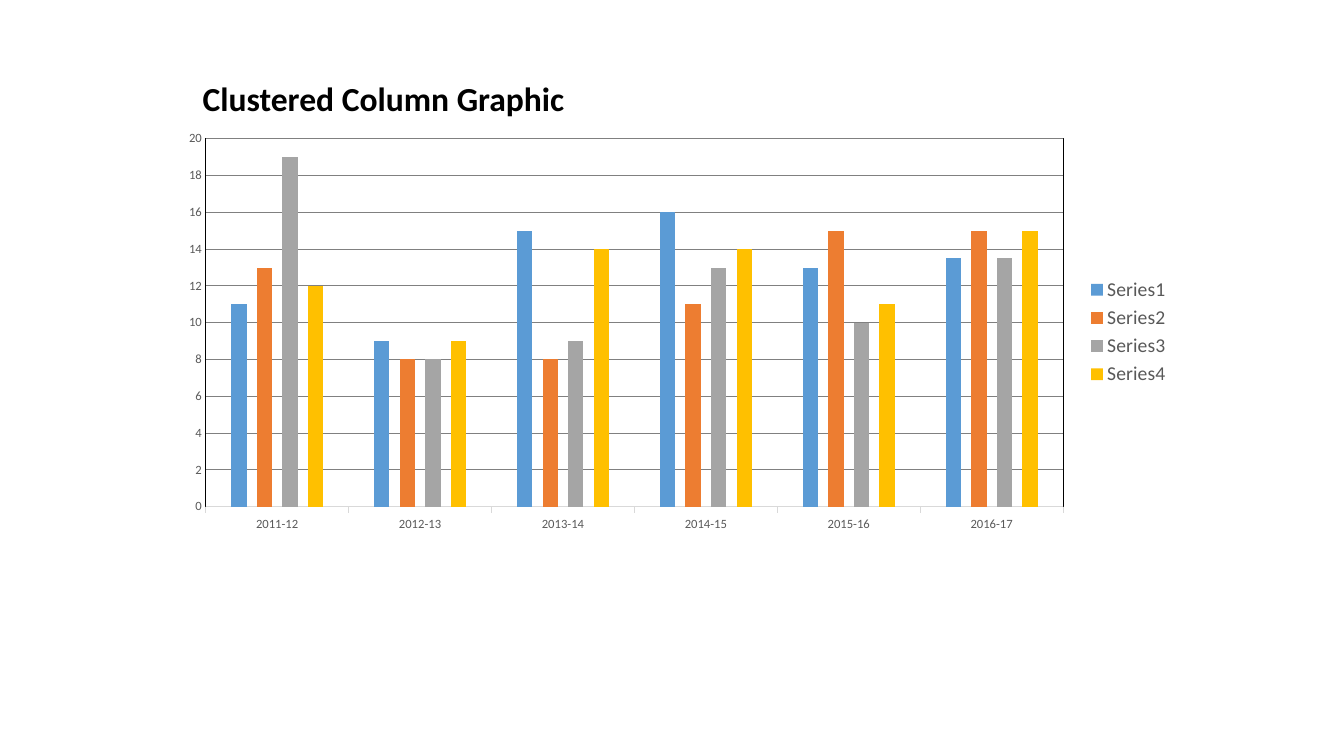
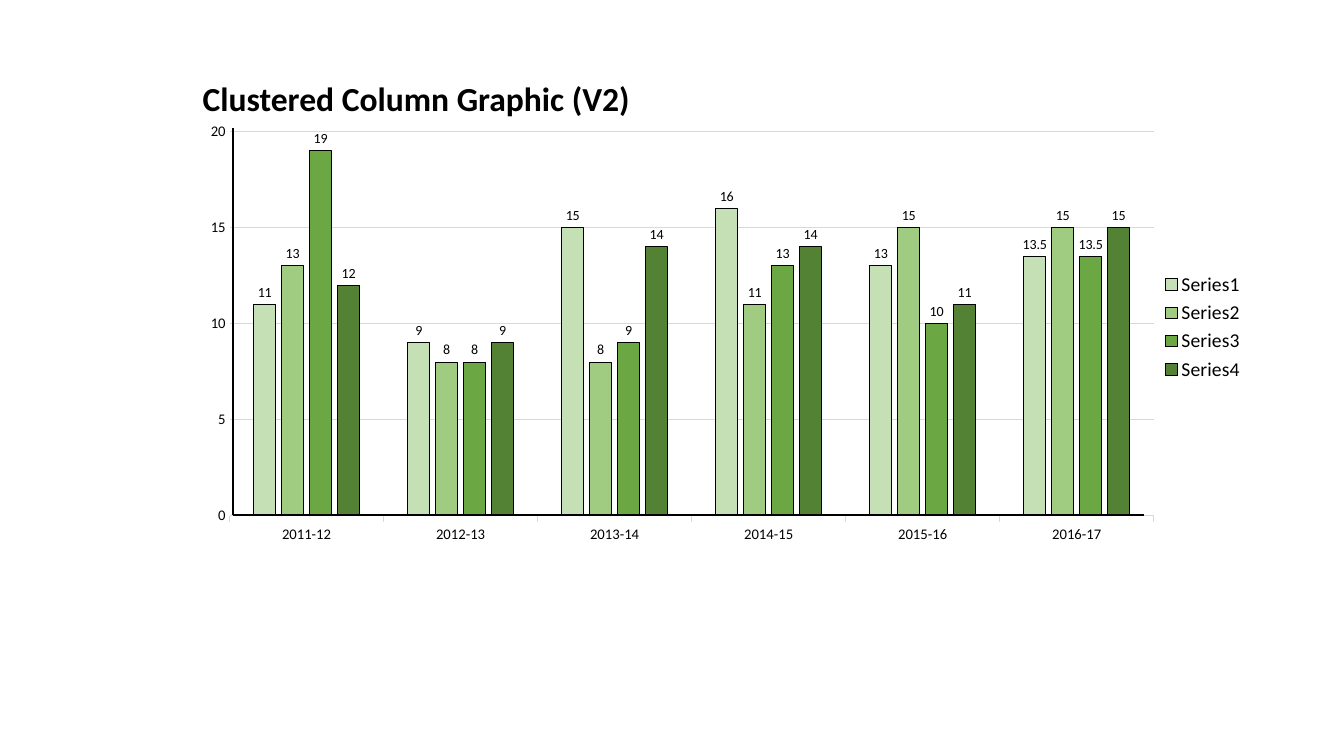
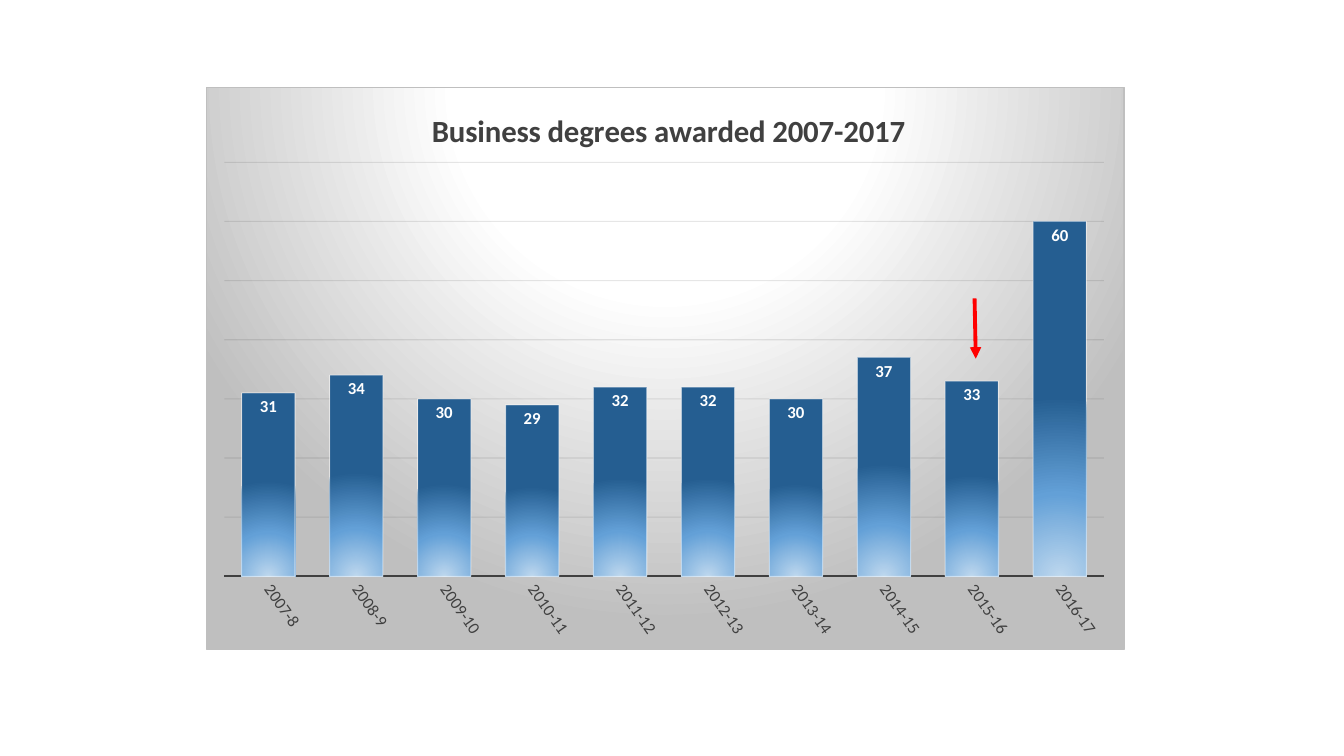
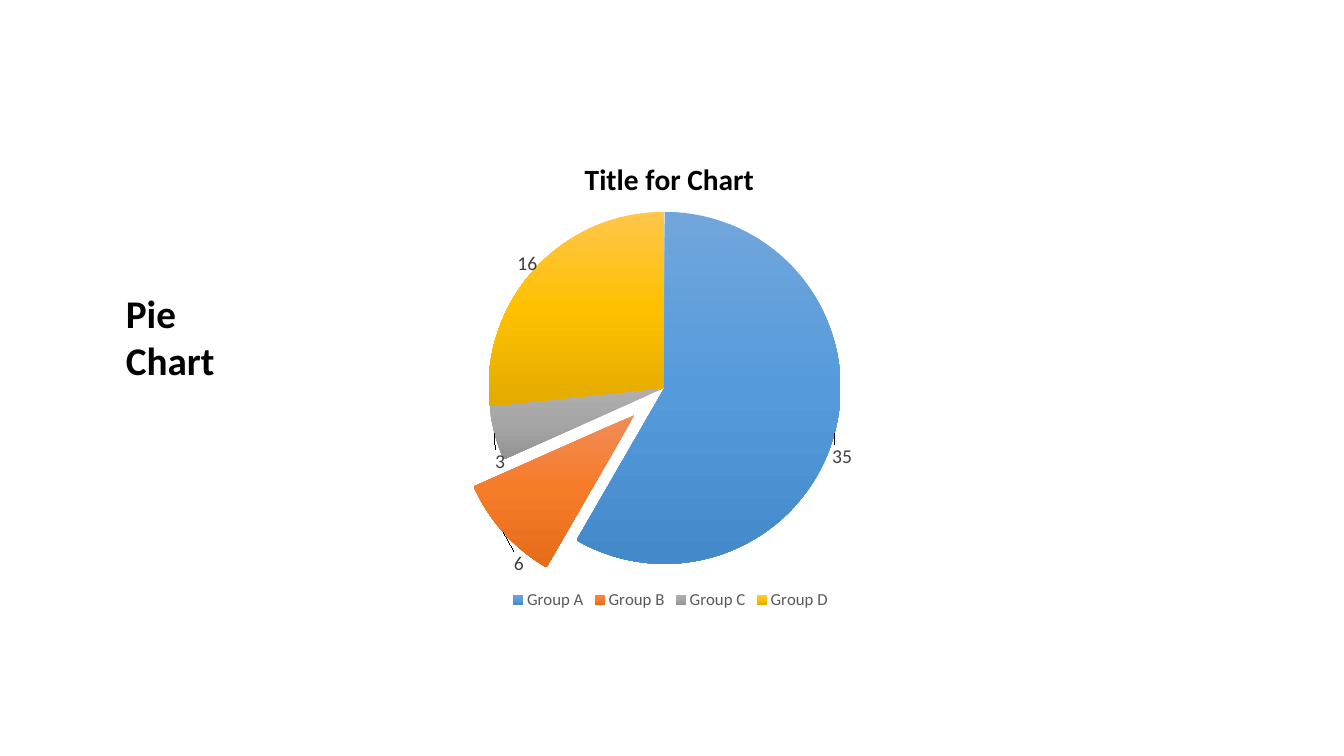
"""Build four slides of column and pie charts."""
from pptx import Presentation
from pptx.chart.data import CategoryChartData
from pptx.dml.color import RGBColor
from pptx.enum.chart import XL_CHART_TYPE, XL_LABEL_POSITION, XL_LEGEND_POSITION, XL_TICK_MARK
from pptx.enum.shapes import MSO_CONNECTOR
from pptx.enum.text import MSO_ANCHOR, MSO_AUTO_SIZE, PP_ALIGN
from pptx.oxml import parse_xml
from pptx.oxml.ns import nsdecls, qn
from pptx.util import Cm, Pt

FONT = "Calibri"
BLACK, DARK, GREY, PALE, WHITE = "000000", "404040", "595959", "D9D9D9", "FFFFFF"
TITLE_ONLY, BLANK = 5, 6


def paint(fill, color):
    """Make a fill solid in a hex colour."""
    fill.solid()
    fill.fore_color.rgb = RGBColor.from_string(color)


def fragment(tag, inner):
    """Parse one drawing or chart element."""
    return parse_xml(f'<{tag} {nsdecls("a", "c")}>{inner}</{tag}>')


years = [f"{year}-{year - 1999}" for year in range(2007, 2017)]
scores = {
    "Series1": [11, 9, 15, 16, 13, 13.5],
    "Series2": [13, 8, 8, 11, 15, 15],
    "Series3": [19, 8, 9, 13, 10, 13.5],
    "Series4": [12, 9, 14, 14, 11, 15],
}
degrees = {"Series 1": [31, 34, 30, 29, 32, 32, 30, 37, 33, 60]}
groups = {"Series 1": [35, 6, 3, 16]}
group_names = ["Group A", "Group B", "Group C", "Group D"]
COLUMN, PIE = XL_CHART_TYPE.COLUMN_CLUSTERED, XL_CHART_TYPE.PIE

contents = [
    {"heading": "Clustered Column Graphic", "size": 24, "heading_box": (4.85, 1.83, 11.23, 1.27),
     "kind": COLUMN, "box": (4.27, 3.12, 25.48, 10.49), "plot": (0.036, 0.036, 0.848, 0.884),
     "categories": years[4:], "series": scores, "legend": ("RIGHT", 14, GREY)},
    {"heading": "Clustered Column Graphic (V2)", "size": 24, "heading_box": (4.85, 1.83, 11.91, 1.27),
     "kind": COLUMN, "box": (4.85, 2.69, 26.77, 11.1), "plot": (0.035, 0.056, 0.87, 0.873),
     "categories": years[4:], "series": scores, "legend": ("RIGHT", 14, BLACK)},
    {"kind": COLUMN, "box": (5.18, 2.18, 23.16, 14.2), "plot": (0.02, 0.134, 0.958, 0.736),
     "categories": years, "series": degrees,
     "title": ("Business degrees awarded 2007-2017", 22, DARK, (0.24, 0.03))},
    {"heading": "Pie\nChart", "size": 28, "heading_box": (2.92, 7.16, 5.56, 2.64),
     "kind": PIE, "box": (6.48, 3.25, 20.83, 12.22), "plot": (0.28, 0.171, 0.426, 0.726),
     "categories": group_names, "series": groups, "legend": ("BOTTOM", 12, GREY),
     "title": ("Title for Chart", 21, BLACK, (0.39, 0.05))},
]

deck = Presentation()
deck.slide_width, deck.slide_height = Cm(33.87), Cm(19.05)
pages, charts = [], []

for content in contents:
    heading = content.get("heading")
    page = deck.slides.add_slide(deck.slide_layouts[TITLE_ONLY if heading else BLANK])
    pages.append(page)
    if heading:
        box = page.shapes.title
        box.left, box.top, box.width, box.height = map(Cm, content["heading_box"])
        frame = box.text_frame
        frame.text = heading
        frame.word_wrap = True
        frame.auto_size = MSO_AUTO_SIZE.NONE
        frame.vertical_anchor = MSO_ANCHOR.TOP
        for paragraph in frame.paragraphs:
            paragraph.alignment = PP_ALIGN.LEFT
            paragraph.font.name, paragraph.font.size = FONT, Pt(content["size"])
            paragraph.font.bold = True
            paint(paragraph.font.fill, BLACK)

    data = CategoryChartData()
    data.categories = content["categories"]
    for name, values in content["series"].items():
        data.add_series(name, values)
    chart = page.shapes.add_chart(content["kind"], *map(Cm, content["box"]), data).chart
    charts.append(chart)
    chart.font.name, chart.font.size = FONT, Pt(10)
    paint(chart.font.fill, BLACK)
    chart.plots[0].vary_by_categories = content["kind"] == PIE

    plot_area = chart.element.find(qn("c:chart")).find(qn("c:plotArea"))
    placements = [(plot_area, 0, content["plot"])]
    chart.has_title = "title" in content
    if chart.has_title:
        text, size, color, place = content["title"]
        title_frame = chart.chart_title.text_frame
        title_frame.text = text
        font = title_frame.paragraphs[0].font
        font.name, font.size, font.bold = FONT, Pt(size), True
        paint(font.fill, color)
        placements.append((chart.element.xpath("c:chart/c:title")[0], 1, place))
    for parent, index, place in placements:
        for old in parent.findall(qn("c:layout")):
            parent.remove(old)
        target = '<c:layoutTarget val="inner"/>' if parent is plot_area else ""
        modes = '<c:xMode val="edge"/><c:yMode val="edge"/>'
        sizes = "".join(f'<c:{side} val="{value}"/>' for side, value in zip("xywh", place))
        layout = f"<c:manualLayout>{target}{modes}{sizes}</c:manualLayout>"
        parent.insert(index, fragment("c:layout", layout))

    empty = "<a:noFill/><a:ln><a:noFill/></a:ln>"
    plot_area.append(fragment("c:spPr", empty))
    chart.element.find(qn("c:chart")).addnext(fragment("c:spPr", empty))
    chart.has_legend = "legend" in content
    if chart.has_legend:
        side, size, color = content["legend"]
        chart.legend.position = XL_LEGEND_POSITION[side]
        chart.legend.include_in_layout = False
        chart.legend.font.name, chart.legend.font.size = FONT, Pt(size)
        paint(chart.legend.font.fill, color)

basic, labelled, awarded, pie = charts

columns = [
    (basic, 333, -67, 20, 2, 9, GREY, (PALE, 0.75), "808080",
     ["5B9BD5", "ED7D31", "A5A5A5", "FFC000"], None),
    (labelled, 219, -27, 20, 5, 10.5, BLACK, (PALE, 0.75), PALE,
     ["C5E0B4", "A0CC82", "6BA743", "548235"], BLACK),
    (awarded, 65, 0, 70, 10, 12, DARK, (DARK, 1.5), "0D0D0D", ["255E91"], WHITE),
]
for chart, gap, overlap, top, step, size, color, base, grid, fills, outline in columns:
    plot = chart.plots[0]
    plot.gap_width, plot.overlap = gap, overlap
    values = chart.value_axis
    values.minimum_scale, values.maximum_scale, values.major_unit = 0, top, step
    values.major_tick_mark = XL_TICK_MARK.NONE
    values.format.line.fill.background()
    grid_line = values.major_gridlines.format.line
    paint(grid_line.fill, grid)
    grid_line.width = Pt(0.75)
    categories = chart.category_axis
    categories.major_tick_mark = XL_TICK_MARK.OUTSIDE
    paint(categories.format.line.fill, base[0])
    categories.format.line.width = Pt(base[1])
    for axis in (values, categories):
        axis.tick_labels.font.name, axis.tick_labels.font.size = FONT, Pt(size)
        paint(axis.tick_labels.font.fill, color)
    for series, fill in zip(plot.series, fills):
        series.invert_if_negative = False
        paint(series.format.fill, fill)
        if outline:
            paint(series.format.line.fill, outline)
            series.format.line.width = Pt(0.75)

basic.element.xpath("c:chart/c:plotArea/c:spPr/a:ln")[0].set("w", str(Pt(0.75)))
paint_line = f'<a:solidFill><a:srgbClr val="{BLACK}"/></a:solidFill>'
border = basic.element.xpath("c:chart/c:plotArea/c:spPr/a:ln")[0]
border.replace(border[0], fragment("a:solidFill", f'<a:srgbClr val="{BLACK}"/>'))

awarded.value_axis.visible = False
awarded.category_axis.major_tick_mark = XL_TICK_MARK.NONE
label_body = awarded.element.xpath(".//c:catAx/c:txPr/a:bodyPr")[0]
label_body.set("rot", "3300000")
label_body.set("vert", "horz")
border = awarded.element.xpath("c:spPr/a:ln")[0]
border.set("w", str(Pt(0.75)))
border.replace(border[0], fragment("a:solidFill", '<a:srgbClr val="BFBFBF"/>'))
for route, alpha in ((".//c:majorGridlines//a:srgbClr", 10), (".//c:ser/c:spPr/a:ln//a:srgbClr", 50)):
    color = awarded.element.xpath(route)[0]
    color.append(fragment("a:alpha", ""))
    color[0].set("val", str(alpha * 1000))

label_styles = [
    (labelled, XL_LABEL_POSITION.OUTSIDE_END, 10, BLACK, False),
    (awarded, XL_LABEL_POSITION.INSIDE_END, 12, WHITE, True),
    (pie, XL_LABEL_POSITION.OUTSIDE_END, 14, DARK, False),
]
for chart, position, size, color, bold in label_styles:
    for series in chart.plots[0].series:
        labels = series.data_labels
        labels.show_value = True
        labels.position = position
        labels.font.name, labels.font.size, labels.font.bold = FONT, Pt(size), bold
        paint(labels.font.fill, color)

slice_colors = [
    ("71A6DB", "559BDB", "448ACA"),
    ("F18C57", "F67B28", "E56C19"),
    ("AFAFAF", "A5A5A5", "939393"),
    ("FFC64B", "FFC000", "E3AB00"),
]
label_shifts = [(-0.01, 0.02), (0.03, 0.03), (0.02, 0.03), (0.01, 0.02)]
for index, (colors, (across, down)) in enumerate(zip(slice_colors, label_shifts)):
    point = pie.plots[0].series[0].points[index]
    paint(point.format.fill, colors[1])
    label = point.data_label
    label.position = XL_LABEL_POSITION.OUTSIDE_END
    label.font.name, label.font.size = FONT, Pt(14)
    paint(label.font.fill, DARK)
    shift = f'<c:manualLayout><c:x val="{across}"/><c:y val="{down}"/></c:manualLayout>'
    pie.element.xpath(".//c:dLbl")[index].insert(1, fragment("c:layout", shift))
exploded = pie.element.xpath(".//c:dPt")[1]
explosion = fragment("c:explosion", "")
explosion.set("val", "23")
exploded.find(qn("c:spPr")).addprevious(explosion)

circle = '<a:path path="circle"><a:fillToRect l="50000" t="{}" r="50000" b="{}"/></a:path>'
gradients = [
    (awarded.element.find(qn("c:spPr")), (0, 39, 100), (WHITE, WHITE, "BFBFBF"),
     circle.format(-80000, 180000)),
    (awarded.element.xpath(".//c:ser/c:spPr")[0], (0, 46, 100), ("BDD7EE", "63A0D7", "255E91"),
     circle.format(130000, -30000)),
]
for properties, colors in zip(pie.element.xpath(".//c:dPt/c:spPr"), slice_colors):
    gradients.append((properties, (0, 50, 100), colors, '<a:lin ang="5400000" scaled="0"/>'))
for properties, positions, colors, direction in gradients:
    stops = "".join(f'<a:gs pos="{position * 1000}"><a:srgbClr val="{color}"/></a:gs>'
                    for position, color in zip(positions, colors))
    properties.replace(properties[0], fragment("a:gradFill", f"<a:gsLst>{stops}</a:gsLst>{direction}"))

strokes = [
    (pages[1], (5.87, 12.98, 28.83, 12.98), BLACK, 1.25, False),
    (pages[1], (5.87, 12.98, 5.87, 3.23), BLACK, 1.25, False),
    (pages[2], (24.56, 7.52, 24.59, 9.04), "FF0000", 2.75, True),
]
for page, ends, color, width, arrow in strokes:
    stroke = page.shapes.add_connector(MSO_CONNECTOR.STRAIGHT, *map(Cm, ends))
    paint(stroke.line.fill, color)
    stroke.line.width = Pt(width)
    properties = stroke.element.spPr
    if arrow:
        head = fragment("a:tailEnd", "")
        head.set("type", "triangle")
        properties.find(qn("a:ln")).append(head)
    properties.append(fragment("a:effectLst", ""))

deck.save("out.pptx")
